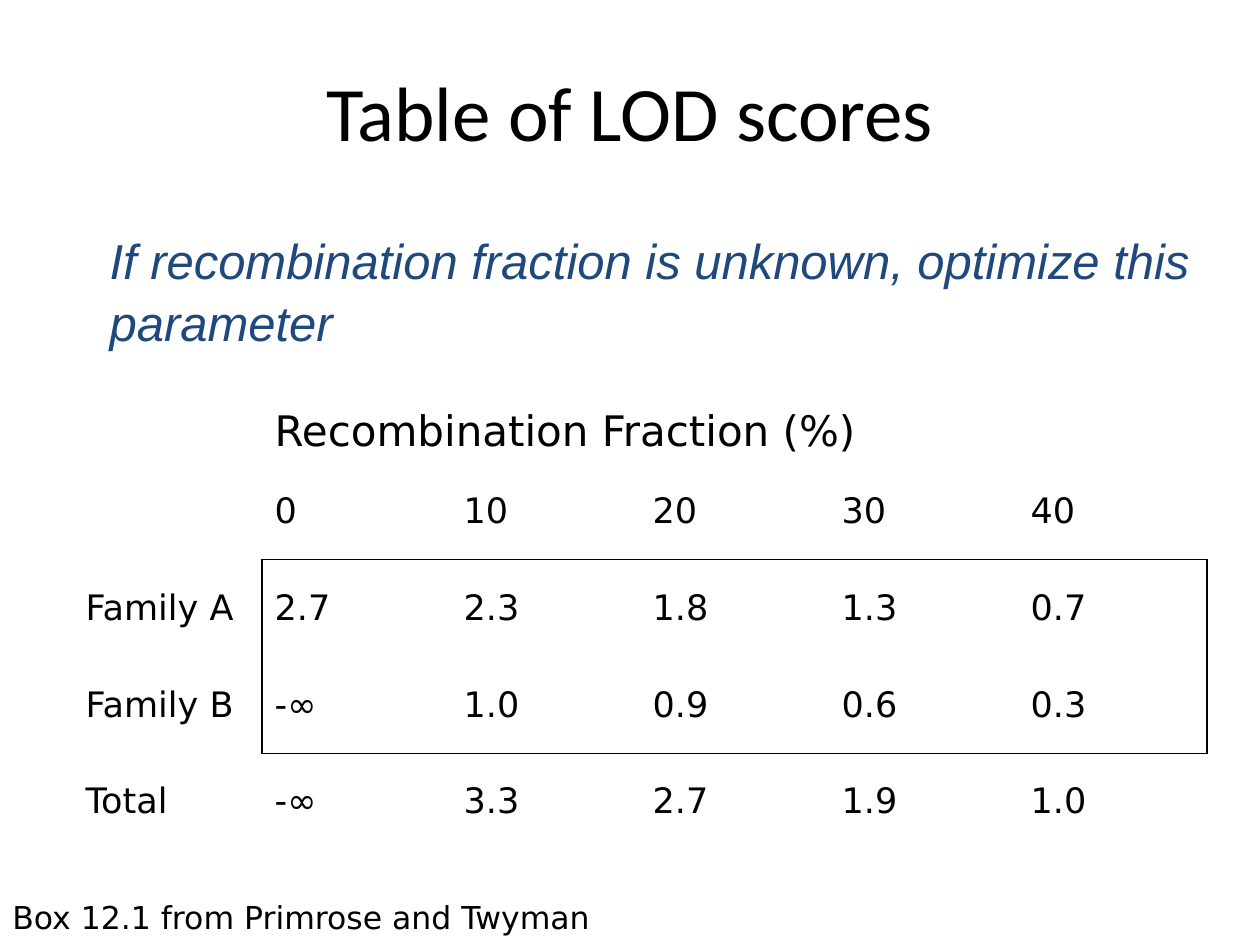
from dataclasses import dataclass

from lxml.etree import SubElement
from pptx import Presentation
from pptx.dml.color import RGBColor
from pptx.enum.text import MSO_ANCHOR, PP_ALIGN
from pptx.oxml.ns import qn
from pptx.util import Inches, Pt


@dataclass(frozen=True)
class Theme:
    ink: str = "000000"
    accent: str = "1F497D"
    title_font: str = "Calibri"
    remark_font: str = "Arial"
    data_font: str = "DejaVu Sans"
    title_size: int = 44
    remark_size: int = 28
    heading_size: int = 24
    data_size: int = 20
    source_size: int = 18
    rule_width: int = 1


class SlideBuilder:
    def __init__(self, slide, theme):
        self.slide = slide
        self.theme = theme

    def style(self, frame, font, size, color, italic=False):
        for paragraph in frame.paragraphs:
            for run in paragraph.runs:
                run.font.name = font
                run.font.size = Pt(size)
                run.font.italic = italic
                run.font.bold = False
                run.font.color.rgb = RGBColor.from_string(color)

    def text(self, words, box, font, size, color, italic=False,
             anchor=MSO_ANCHOR.MIDDLE, align=PP_ALIGN.LEFT, indent=0.1, spacing=1.0):
        frame = self.slide.shapes.add_textbox(*map(Inches, box)).text_frame
        frame.word_wrap = True
        frame.vertical_anchor = anchor
        frame.margin_left = Inches(indent)
        frame.text = words
        frame.paragraphs[0].alignment = align
        frame.paragraphs[0].line_spacing = spacing
        self.style(frame, font, size, color, italic)

    def borders(self, cell, drawn):
        properties = cell._tc.get_or_add_tcPr()
        for position, side in enumerate("LRTB"):
            line = properties.makeelement(qn(f"a:ln{side}"), {"w": str(Pt(self.theme.rule_width))})
            properties.insert(position, line)
            if side in drawn:
                fill = SubElement(line, qn("a:solidFill"))
                SubElement(fill, qn("a:srgbClr"), val=self.theme.ink)
            else:
                SubElement(line, qn("a:noFill"))

    def table(self, rows, box, heights, framed_rows):
        theme = self.theme
        columns = len(rows[-1])
        table = self.slide.shapes.add_table(len(rows), columns, *map(Inches, box)).table
        table.first_row = False
        table.horz_banding = False
        for row, height in zip(table.rows, heights):
            row.height = Inches(height)
        first, last = framed_rows
        for r, values in enumerate(rows):
            for c in range(columns):
                cell = table.cell(r, c)
                cell.fill.background()
                cell.vertical_anchor = MSO_ANCHOR.MIDDLE if r else MSO_ANCHOR.BOTTOM
                cell.text = values[c] if c < len(values) else ""
                size = theme.data_size if r else theme.heading_size
                self.style(cell.text_frame, theme.data_font, size, theme.ink)
                inside = first <= r <= last
                sides = {
                    "L": inside and c == 1,
                    "R": inside and c in (0, columns - 1),
                    "T": c > 0 and r in (first, last + 1),
                    "B": c > 0 and r in (first - 1, last),
                }
                self.borders(cell, [side for side, shown in sides.items() if shown])
        table.cell(0, 1).merge(table.cell(0, columns - 1))


def main():
    presentation = Presentation()
    presentation.slide_width = Inches(10)
    presentation.slide_height = Inches(7.5)
    theme = Theme()
    builder = SlideBuilder(presentation.slides.add_slide(presentation.slide_layouts[6]), theme)

    builder.text("Table of LOD scores", (0.5, 0.25, 9, 1.25),
                 theme.title_font, theme.title_size, theme.ink, align=PP_ALIGN.CENTER)

    lod_scores = [
        ["", "Recombination Fraction (%)"],
        ["", "0", "10", "20", "30", "40"],
        ["Family A", "2.7", "2.3", "1.8", "1.3", "0.7"],
        ["Family B", "-∞", "1.0", "0.9", "0.6", "0.3"],
        ["Total", "-∞", "3.3", "2.7", "1.9", "1.0"],
    ]
    builder.table(lod_scores, (0.58, 3, 9, 3.75), [0.67] + [0.77] * 4, framed_rows=(2, 3))

    builder.text("If recombination fraction is unknown, optimize this parameter",
                 (0.33, 1.67, 9.67, 1.25), theme.remark_font, theme.remark_size,
                 theme.accent, italic=True, indent=0.54, spacing=1.05)
    builder.text("Box 12.1 from Primrose and Twyman", (0, 7.08, 5.17, 0.4),
                 theme.data_font, theme.source_size, theme.ink, anchor=MSO_ANCHOR.TOP)

    presentation.save("out.pptx")


if __name__ == "__main__":
    main()
